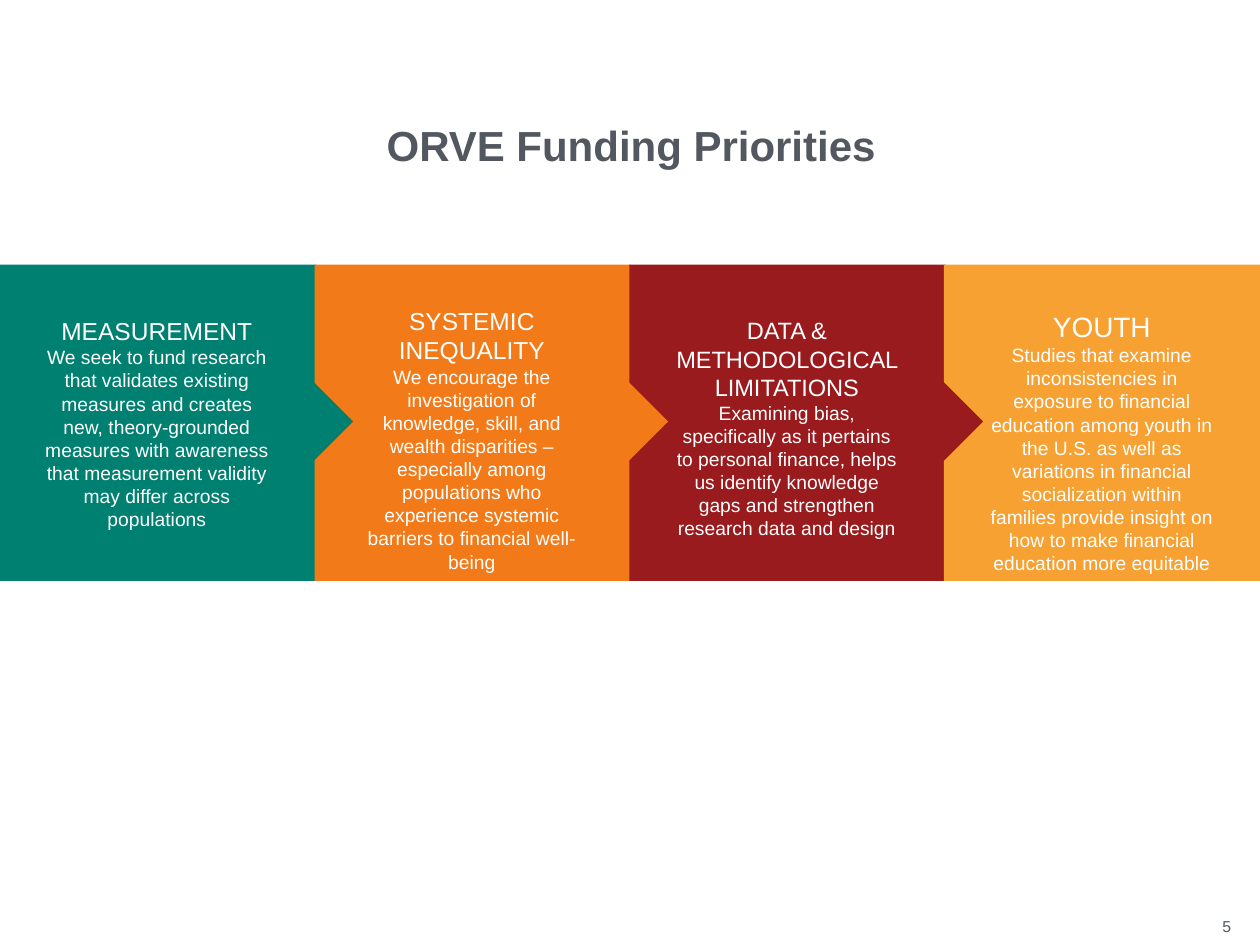
from dataclasses import dataclass

from pptx import Presentation
from pptx import util as u
from pptx.dml.color import RGBColor
from pptx.enum import shapes, text

FONT = "Arial"
WHITE = "FFFFFF"
PANEL_PITCH = 2.5
PANEL_TOP = 2.1
PANEL_SIZE = 2.51
ARROW_SIZE = 0.45
COPY_INSET = 0.24
COPY_WIDTH = 2.01


@dataclass
class Priority:
    heading: str
    heading_size: float
    description: str
    color: str
    copy_top: float
    copy_height: float


@dataclass
class Line:
    wording: str
    size: float
    color: str
    bold: bool = False


PRIORITIES = [
    Priority("MEASUREMENT", 14,
             "We seek to fund research that validates existing measures and creates new, "
             "theory-grounded measures with awareness that measurement validity may differ "
             "across populations",
             "008071", 2.46, 1.85),
    Priority("SYSTEMIC INEQUALITY", 14,
             "We encourage the investigation of knowledge, skill, and wealth disparities – "
             "especially among populations who experience systemic barriers to financial "
             "well-being",
             "F37A19", 2.38, 2.24),
    Priority("DATA & METHODOLOGICAL LIMITATIONS", 13.5,
             "Examining bias, specifically as it pertains to personal finance, helps us "
             "identify knowledge gaps and strengthen research data and design",
             "991B1E", 2.46, 1.89),
    Priority("YOUTH", 16,
             "Studies that examine inconsistencies in exposure to financial education among "
             "youth in the U.S. as well as variations in financial socialization within "
             "families provide insight on how to make financial education more equitable",
             "F7A133", 2.41, 2.22),
]


def rgb(value: str) -> RGBColor:
    return RGBColor.from_string(value)


def add_block(slide, kind, left: float, top: float, size: float, color: str,
              rotation: float = 0) -> None:
    """Draw a square-framed shape with a flat fill and no line."""
    block = slide.shapes.add_shape(kind, u.Inches(left), u.Inches(top),
                                   u.Inches(size), u.Inches(size))
    block.shadow.inherit = False
    block.fill.solid()
    block.fill.fore_color.rgb = rgb(color)
    block.line.fill.background()
    block.rotation = rotation


def add_copy(slide, left: float, top: float, width: float, height: float,
             lines: list[Line], align=text.PP_ALIGN.CENTER,
             anchor=text.MSO_ANCHOR.TOP) -> None:
    """Add a text box with one paragraph per line."""
    box = slide.shapes.add_textbox(u.Inches(left), u.Inches(top),
                                   u.Inches(width), u.Inches(height))
    frame = box.text_frame
    frame.word_wrap = True
    frame.vertical_anchor = anchor
    for index, line in enumerate(lines):
        paragraph = frame.add_paragraph() if index else frame.paragraphs[0]
        paragraph.alignment = align
        run = paragraph.add_run()
        run.text = line.wording
        run.font.name = FONT
        run.font.size = u.Pt(line.size)
        run.font.bold = line.bold
        run.font.color.rgb = rgb(line.color)


def main() -> None:
    deck = Presentation()
    deck.slide_width, deck.slide_height = u.Inches(10), u.Inches(7.5)
    slide = deck.slides.add_slide(deck.slide_layouts[6])

    for column, priority in enumerate(PRIORITIES):
        add_block(slide, shapes.MSO_SHAPE.RECTANGLE, column * PANEL_PITCH - 0.003 * column,
                  PANEL_TOP, PANEL_SIZE, priority.color)

    # Each arrow points from its panel into the next one.
    for column, priority in enumerate(PRIORITIES[:-1], start=1):
        add_block(slide, shapes.MSO_SHAPE.RIGHT_TRIANGLE, column * PANEL_PITCH - 0.24,
                  3.12, ARROW_SIZE, priority.color, rotation=225)

    add_copy(slide, 7.62, 7.2, 2.25, 0.3, [Line("5", 9, "505961")],
             text.PP_ALIGN.RIGHT, text.MSO_ANCHOR.MIDDLE)
    add_copy(slide, 2.64, 0.9, 4.74, 0.5,
             [Line("ORVE Funding Priorities", 24, "535860", bold=True)])

    for column, priority in enumerate(PRIORITIES):
        add_copy(slide, column * PANEL_PITCH + COPY_INSET, priority.copy_top,
                 COPY_WIDTH, priority.copy_height,
                 [Line(priority.heading, priority.heading_size, WHITE),
                  Line(priority.description, 11, WHITE)])

    deck.save("out.pptx")


if __name__ == "__main__":
    main()
